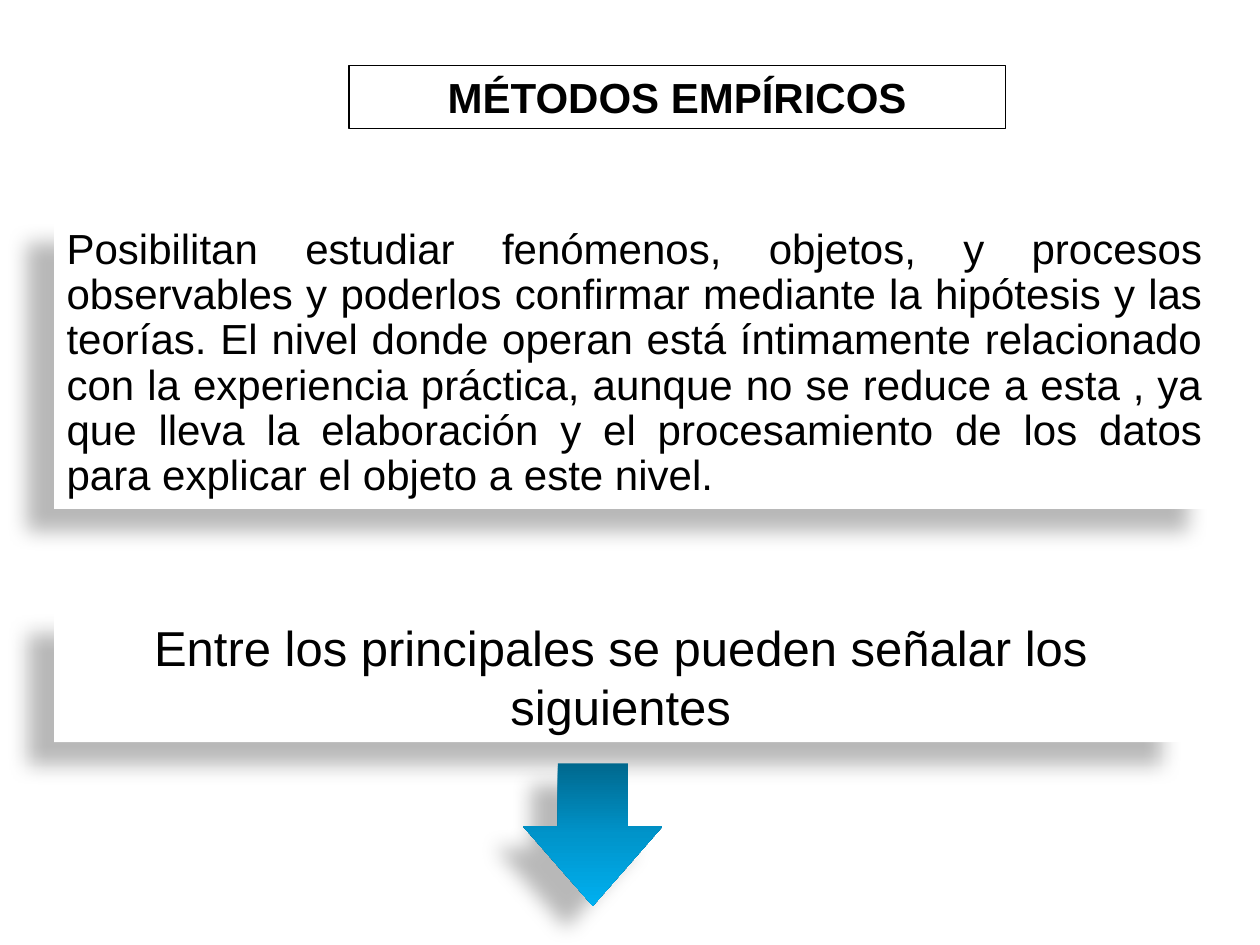
from dataclasses import dataclass

from pptx import Presentation
from pptx.dml.color import RGBColor
from pptx.enum.shapes import MSO_SHAPE as Preset
from pptx.enum.text import MSO_ANCHOR as Anchor, PP_ALIGN as Align
from pptx.oxml import parse_xml
from pptx.oxml.ns import nsdecls
from pptx.util import Inches, Pt


@dataclass(frozen=True)
class Theme:
    font: str = "Arial"
    ink: str = "000000"
    paper: str = "FFFFFF"
    body_size: int = 24
    lead_size: int = 28
    outline: float = 0.75
    arrow_stops: tuple = ((0, "00688E"), (50, "0094CA"), (100, "00B0F0"))
    shadow_opacity: int = 28
    shadow_blur: float = 11.8
    shadow_distance: float = 19.7
    shadow_angle: int = 141


@dataclass(frozen=True)
class Box:
    left: float
    top: float
    width: float
    height: float

    def lengths(self) -> tuple:
        return tuple(map(Inches, (self.left, self.top, self.width, self.height)))


@dataclass(frozen=True)
class Panel:
    box: Box
    text: str
    size: int
    align: Align
    line_spacing: float = 1.0


THEME = Theme()

HEADING = Panel(Box(2.77, 0.52, 5.21, 0.5), "MÉTODOS EMPÍRICOS", THEME.body_size, Align.CENTER)
PANELS = (
    Panel(
        Box(0.43, 1.76, 9.21, 2.28),
        "Posibilitan estudiar fenómenos, objetos, y procesos observables y poderlos "
        "confirmar mediante la hipótesis y las teorías. El nivel donde operan está "
        "íntimamente relacionado con la experiencia práctica, aunque no se reduce a "
        "esta , ya que lleva la elaboración y el procesamiento de los datos para "
        "explicar el objeto a este nivel.",
        THEME.body_size,
        Align.JUSTIFY,
        0.9,
    ),
    Panel(
        Box(0.43, 4.85, 8.99, 1.04),
        "Entre los principales se pueden señalar los siguientes",
        THEME.lead_size,
        Align.CENTER,
    ),
)
ARROW = Box(4.15, 6.06, 1.11, 1.13)


def write_text(shape, panel: Panel, bold: bool = False) -> None:
    frame = shape.text_frame
    frame.text = panel.text
    frame.word_wrap = True
    frame.vertical_anchor = Anchor.TOP
    frame.margin_left = frame.margin_right = Inches(0.1)
    frame.margin_top = frame.margin_bottom = Inches(0.05)
    paragraph = frame.paragraphs[0]
    paragraph.alignment = panel.align
    paragraph.line_spacing = panel.line_spacing
    paragraph.space_before = Pt(0)
    font = paragraph.runs[0].font
    font.name = THEME.font
    font.size = Pt(panel.size)
    font.bold = bold
    font.color.rgb = RGBColor.from_string(THEME.ink)


def cast_shadow(shape) -> None:
    shape.shadow.inherit = False
    effects = shape._element.spPr.find("{*}effectLst")
    effects.append(parse_xml(
        f'<a:outerShdw {nsdecls("a")} blurRad="{Pt(THEME.shadow_blur)}" '
        f'dist="{Pt(THEME.shadow_distance)}" dir="{THEME.shadow_angle * 60000}" '
        f'algn="ctr" rotWithShape="0"><a:srgbClr val="{THEME.ink}">'
        f'<a:alpha val="{THEME.shadow_opacity * 1000}"/></a:srgbClr></a:outerShdw>'
    ))


def draw_heading(slide, panel: Panel) -> None:
    heading = slide.shapes.title
    heading.left, heading.top, heading.width, heading.height = panel.box.lengths()
    heading.line.color.rgb = RGBColor.from_string(THEME.ink)
    heading.line.width = Pt(THEME.outline)
    write_text(heading, panel, bold=True)


def draw_panel(slide, panel: Panel) -> None:
    shape = slide.shapes.add_shape(Preset.RECTANGLE, *panel.box.lengths())
    shape.fill.solid()
    shape.fill.fore_color.rgb = RGBColor.from_string(THEME.paper)
    shape.line.fill.background()
    cast_shadow(shape)
    write_text(shape, panel)


def draw_arrow(slide, box: Box) -> None:
    arrow = slide.shapes.add_shape(Preset.DOWN_ARROW, *box.lengths())
    arrow.adjustments[0] = 0.5
    arrow.adjustments[1] = 0.57
    stops = "".join(
        f'<a:gs pos="{position * 1000}"><a:srgbClr val="{color}"/></a:gs>'
        for position, color in THEME.arrow_stops
    )
    arrow._element.spPr.find("{*}prstGeom").addnext(parse_xml(
        f'<a:gradFill {nsdecls("a")} rotWithShape="1"><a:gsLst>{stops}</a:gsLst>'
        f'<a:lin ang="{90 * 60000}" scaled="0"/></a:gradFill>'
    ))
    arrow.line.fill.background()
    cast_shadow(arrow)


def main() -> None:
    deck = Presentation()
    deck.slide_width, deck.slide_height = Inches(10), Inches(7.5)
    slide = deck.slides.add_slide(deck.slide_layouts[5])
    draw_heading(slide, HEADING)
    for panel in PANELS:
        draw_panel(slide, panel)
    draw_arrow(slide, ARROW)
    deck.save("out.pptx")


if __name__ == "__main__":
    main()
